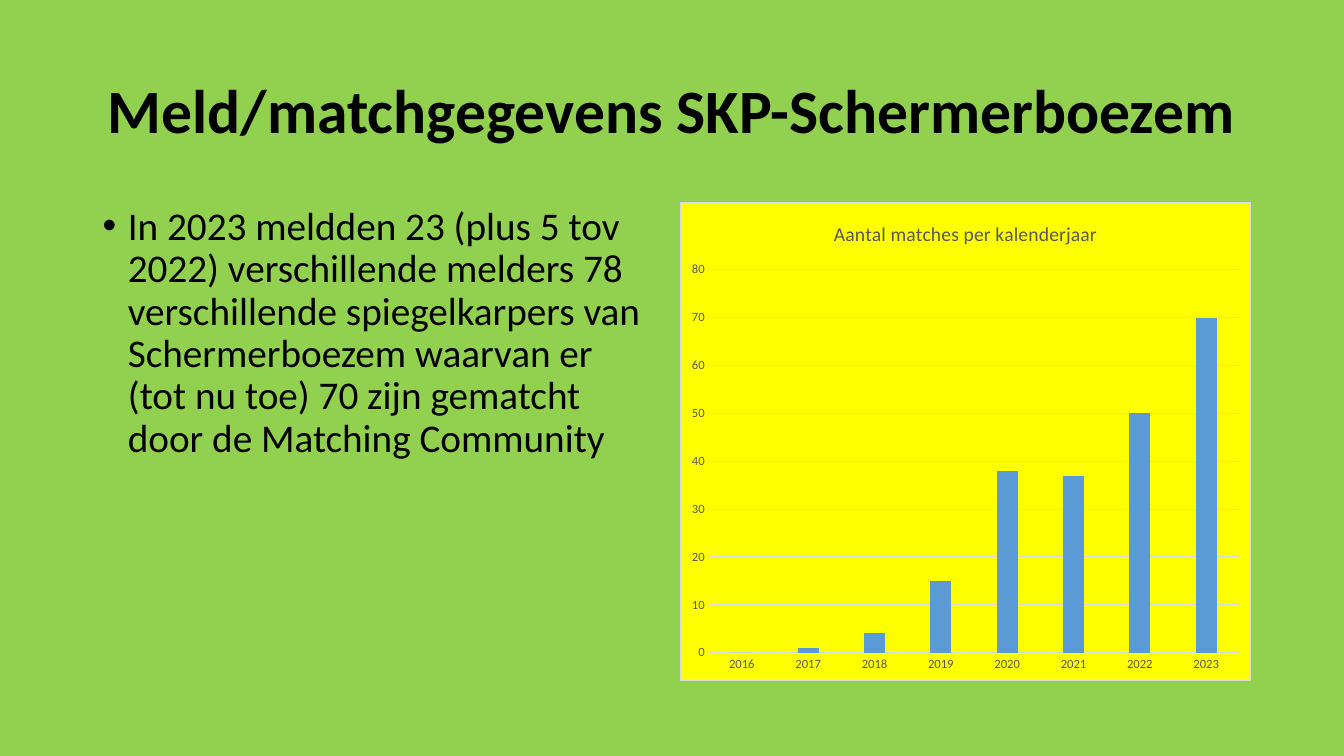
from dataclasses import dataclass

from lxml import etree
from pptx import Presentation
from pptx.chart.data import CategoryChartData
from pptx.dml.color import RGBColor
from pptx.enum.chart import XL_CHART_TYPE, XL_TICK_MARK
from pptx.enum.text import MSO_ANCHOR, PP_ALIGN
from pptx.oxml import parse_xml
from pptx.oxml.ns import nsdecls, qn
from pptx.util import Inches, Pt

COLUMN_CHART = XL_CHART_TYPE.COLUMN_CLUSTERED
NO_TICK = XL_TICK_MARK.NONE
TOP, MIDDLE = MSO_ANCHOR.TOP, MSO_ANCHOR.MIDDLE
LEFT, CENTER = PP_ALIGN.LEFT, PP_ALIGN.CENTER

FONT = "Calibri"
COLORS = {
    "background": "92D050",
    "text": "000000",
    "chart": "FFFF00",
    "column": "5B9BD5",
    "line": "D9D9D9",
    "label": "595959",
}

# Two-column layout, in inches
WIDTH, HEIGHT = 13.33, 7.5
MARGIN, GUTTER = 0.92, 0.16
CONTENT_WIDTH = WIDTH - 2 * MARGIN
COLUMN_WIDTH = (CONTENT_WIDTH - GUTTER) / 2
BODY_TOP, BODY_HEIGHT = 2, 4.76

MATCHES = {"2016": 0, "2017": 1, "2018": 4, "2019": 15,
           "2020": 38, "2021": 37, "2022": 50, "2023": 70}


@dataclass
class Box:
    left: float
    top: float
    width: float
    height: float

    def lengths(self) -> list:
        return [Inches(n) for n in (self.left, self.top, self.width, self.height)]


@dataclass
class TextBlock:
    box: Box
    text: str
    size: int
    bold: bool = False
    alignment: PP_ALIGN = LEFT
    anchor: MSO_ANCHOR = TOP
    bullet: bool = False


TEXT_BLOCKS = [
    TextBlock(Box(MARGIN, 0.4, CONTENT_WIDTH, 1.45),
              "Meld/matchgegevens SKP-Schermerboezem",
              44, bold=True, alignment=CENTER, anchor=MIDDLE),
    TextBlock(Box(MARGIN, BODY_TOP, COLUMN_WIDTH, BODY_HEIGHT),
              "In 2023 meldden 23 (plus 5 tov 2022) verschillende melders 78 "
              "verschillende spiegelkarpers van Schermerboezem waarvan er "
              "(tot nu toe) 70 zijn gematcht door de Matching Community",
              28, bullet=True),
]
CHART_BOX = Box(MARGIN + COLUMN_WIDTH + GUTTER, BODY_TOP, COLUMN_WIDTH, BODY_HEIGHT)


def color(name: str) -> RGBColor:
    return RGBColor.from_string(COLORS[name])


def style_font(font, size: float, color_name: str, bold: bool = False) -> None:
    font.name = FONT
    font.size = Pt(size)
    font.bold = bold
    font.color.rgb = color(color_name)


def style_line(line) -> None:
    line.color.rgb = color("line")
    line.width = Pt(0.75)


def add_bullet(paragraph) -> None:
    properties = paragraph._p.get_or_add_pPr()
    properties.set("marL", str(Inches(0.25)))
    properties.set("indent", str(Inches(-0.25)))
    etree.SubElement(properties, qn("a:buFont"), typeface="Arial")
    etree.SubElement(properties, qn("a:buChar"), char="•")


def add_text(slide, block: TextBlock) -> None:
    text_frame = slide.shapes.add_textbox(*block.box.lengths()).text_frame
    text_frame.word_wrap = True
    text_frame.vertical_anchor = block.anchor
    text_frame.text = block.text
    paragraph = text_frame.paragraphs[0]
    paragraph.alignment = block.alignment
    paragraph.line_spacing = 0.9
    style_font(paragraph.runs[0].font, block.size, "text", block.bold)
    if block.bullet:
        paragraph.space_before = Pt(10)
        add_bullet(paragraph)


def fill_chart_area(chart) -> None:
    area = parse_xml(
        f'<c:spPr {nsdecls("c", "a")}>'
        f'<a:solidFill><a:srgbClr val="{COLORS["chart"]}"/></a:solidFill>'
        f'<a:ln w="{Pt(0.75)}"><a:solidFill><a:srgbClr val="{COLORS["line"]}"/>'
        '</a:solidFill></a:ln></c:spPr>')
    chart._chartSpace.find(qn("c:chart")).addnext(area)


def add_matches_chart(slide) -> None:
    data = CategoryChartData()
    data.categories = list(MATCHES)
    data.add_series("Series 1", list(MATCHES.values()))
    chart = slide.shapes.add_chart(COLUMN_CHART, *CHART_BOX.lengths(), data).chart
    style_font(chart.font, 10, "text")
    fill_chart_area(chart)
    chart.has_legend = False

    # Title
    chart.has_title = True
    title = chart.chart_title
    title.include_in_layout = False
    title.text_frame.text = "Aantal matches per kalenderjaar"
    style_font(title.text_frame.paragraphs[0].runs[0].font, 14, "label")

    # Columns
    plot = chart.plots[0]
    plot.gap_width = 219
    plot.overlap = -27
    plot.vary_by_categories = False
    fill = plot.series[0].format.fill
    fill.solid()
    fill.fore_color.rgb = color("column")

    # Axes
    for axis in (chart.category_axis, chart.value_axis):
        axis.major_tick_mark = axis.minor_tick_mark = NO_TICK
        style_font(axis.tick_labels.font, 9, "label")
    style_line(chart.category_axis.format.line)
    value_axis = chart.value_axis
    value_axis.minimum_scale, value_axis.maximum_scale = 0, 80
    value_axis.major_unit = 10
    value_axis.format.line.fill.background()
    style_line(value_axis.major_gridlines.format.line)


def main() -> None:
    presentation = Presentation()
    presentation.slide_width = Inches(WIDTH)
    presentation.slide_height = Inches(HEIGHT)
    slide = presentation.slides.add_slide(presentation.slide_layouts[6])
    background = slide.background.fill
    background.solid()
    background.fore_color.rgb = color("background")
    for block in TEXT_BLOCKS:
        add_text(slide, block)
    add_matches_chart(slide)
    presentation.save("out.pptx")


if __name__ == "__main__":
    main()
